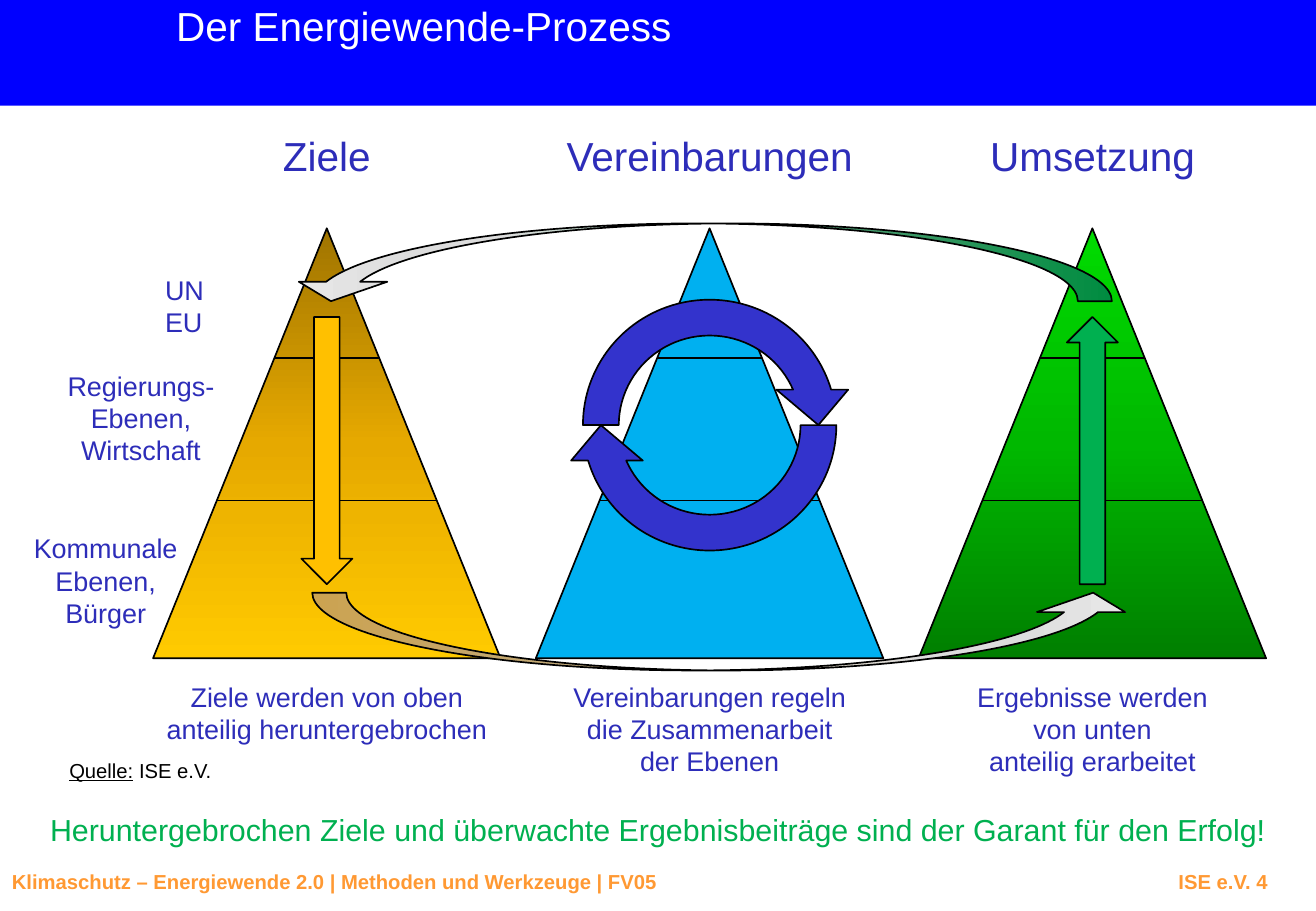
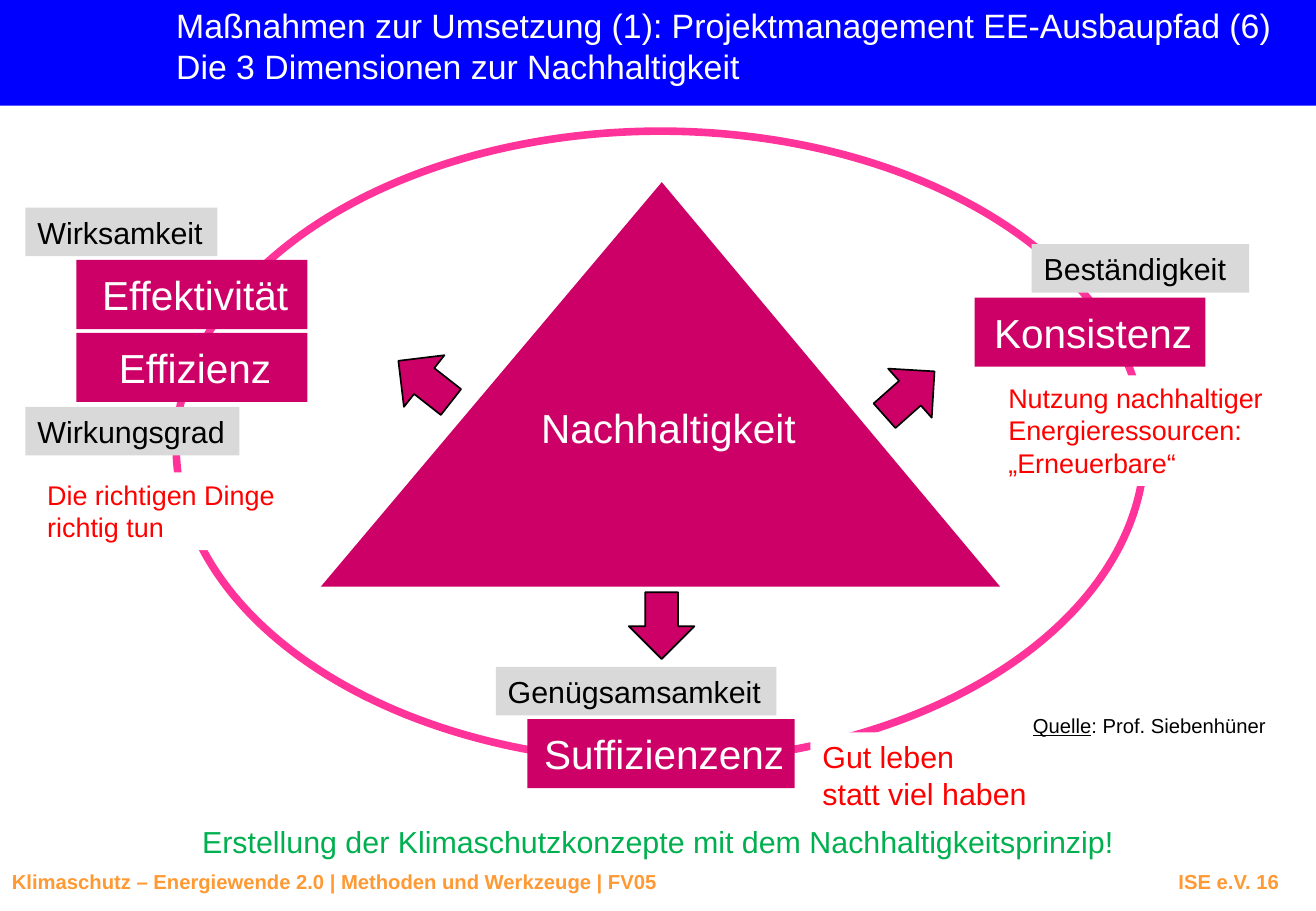
from dataclasses import dataclass

from lxml import etree
from pptx import Presentation
from pptx.dml.color import RGBColor
from pptx.enum.shapes import MSO_CONNECTOR, MSO_SHAPE
from pptx.enum.text import MSO_ANCHOR, MSO_AUTO_SIZE, PP_ALIGN
from pptx.oxml.ns import qn
from pptx.util import Inches, Pt


@dataclass(frozen=True)
class Theme:
    font: str = "Arial"
    band: str = "0000FF"
    footer: str = "FF9933"
    white: str = "FFFFFF"
    black: str = "000000"
    label: str = "2D2DB9"
    green: str = "00B050"
    red: str = "FF0000"
    gold: str = "FFC000"
    cyan: str = "00B0F0"
    cycle: str = "3333CC"
    magenta: str = "CC0066"
    pink: str = "FF3399"
    grey: str = "D9D9D9"
    heading_size: int = 24
    title_size: int = 20
    body_size: int = 18
    label_size: int = 16
    small_size: int = 12


T = Theme()
WIDTH, HEIGHT = 10.83, 7.5
GOLD_FADE = [(0, "A07400"), (50, "E6A900"), (100, "FFCA00")]
GREEN_FADE = [(0, "007F00"), (50, "00B800"), (100, "00DB00")]
GREY_FADE = [(74, "DCDCDC"), (83, "DCDCDC"), (100, "E8E8E8")]
PYRAMID_TOP, PYRAMID_W, PYRAMID_H = 1.88, 2.86, 3.54
COLUMN_X, COLUMN_STEP = 2.69, 3.15


def rgb(color):
    return RGBColor.from_string(color)


def format_runs(p, size, color, bold=False):
    for r in p.runs:
        r.font.name = T.font
        r.font.size = Pt(size)
        r.font.bold = bold
        r.font.color.rgb = rgb(color)


def write(sp, text, size, color, align=PP_ALIGN.LEFT, wrap=False):
    tf = sp.text_frame
    tf.text = text
    tf.word_wrap = wrap
    for p in tf.paragraphs:
        p.alignment = align
        format_runs(p, size, color)
    return tf


def set_insets(tf, inset):
    tf.margin_left = tf.margin_right = Inches(inset)
    tf.margin_top = tf.margin_bottom = Inches(inset)


def add_text(s, box, text, size, color, align=PP_ALIGN.LEFT, wrap=False,
             inset=None):
    sp = s.shapes.add_textbox(*map(Inches, box))
    tf = write(sp, text, size, color, align, wrap)
    tf.auto_size = MSO_AUTO_SIZE.SHAPE_TO_FIT_TEXT
    if inset is not None:
        set_insets(tf, inset)
    return tf


def set_gradient(sp, stops, angle):
    """Fill with (percent, colour) stops; angle runs clockwise in degrees."""
    sp.fill.gradient()
    grad = sp.fill._xPr.find(qn("a:gradFill"))
    stop_list = grad.find(qn("a:gsLst"))
    for old in list(stop_list):
        stop_list.remove(old)
    for percent, color in stops:
        stop = etree.SubElement(stop_list, qn("a:gs"), pos=str(percent * 1000))
        etree.SubElement(stop, qn("a:srgbClr"), val=color)
    grad.find(qn("a:lin")).set("ang", str(angle * 60000))


def add_shape(s, kind, box, fill=None, line=None, weight=1, rotation=0,
              angle=0):
    """Fill is a colour, a list of gradient stops or None."""
    sp = s.shapes.add_shape(kind, *map(Inches, box))
    sp.shadow.inherit = False
    sp.rotation = rotation
    if fill is None:
        sp.fill.background()
    elif isinstance(fill, list):
        set_gradient(sp, fill, angle)
    else:
        sp.fill.solid()
        sp.fill.fore_color.rgb = rgb(fill)
    if line is None:
        sp.line.fill.background()
    else:
        sp.line.color.rgb = rgb(line)
        sp.line.width = Pt(weight)
    return sp


def add_level_line(s, center, half_width, y):
    line = s.shapes.add_connector(
        MSO_CONNECTOR.STRAIGHT, Inches(center - half_width), Inches(y),
        Inches(center + half_width), Inches(y))
    line.line.color.rgb = rgb(T.black)
    line.line.width = Pt(1)
    etree.SubElement(line._element.spPr, qn("a:effectLst"))


def add_frame(s, title, title_box, title_size, page):
    """Draw the title band, the title and the footer."""
    add_shape(s, MSO_SHAPE.RECTANGLE, (0, 0, WIDTH, 0.87), T.band)
    add_text(s, title_box, title, title_size, T.white, inset=0)
    tf = add_text(s, (0, 7.11, WIDTH, 0.3), "", T.small_size, T.footer,
                  wrap=True)
    p = tf.paragraphs[0]
    p.text = ("Klimaschutz – Energiewende 2.0 | Methoden und Werkzeuge | FV05"
              f"\tISE e.V. {page}")
    tabs = etree.SubElement(p._p.get_or_add_pPr(), qn("a:tabLst"))
    etree.SubElement(tabs, qn("a:tab"), pos=str(Inches(9.6)), algn="l")
    format_runs(p, T.small_size, T.footer, bold=True)


def add_source(s, box, label, rest):
    """Write a source note with an underlined label."""
    p = add_text(s, box, label, T.small_size, T.black, inset=0).paragraphs[0]
    p.add_run().text = rest
    format_runs(p, T.small_size, T.black)
    p.runs[0].font.underline = True


def add_message(s, top, text):
    add_text(s, (0, top, WIDTH, 0.44), text, T.body_size, T.green,
             PP_ALIGN.CENTER, wrap=True, inset=0.07)


def add_pyramid_column(s, center, heading, caption, fill, angle):
    add_text(s, (center - 1.29, 1.03, 2.58, 0.51), heading, T.heading_size,
             T.label, PP_ALIGN.CENTER)
    add_shape(s, MSO_SHAPE.ISOSCELES_TRIANGLE,
              (center - PYRAMID_W / 2, PYRAMID_TOP, PYRAMID_W, PYRAMID_H),
              fill, T.black, angle=angle)
    for y in (2.95, 4.12):
        half_width = (y - PYRAMID_TOP) / PYRAMID_H * PYRAMID_W / 2
        add_level_line(s, center, half_width, y)
    add_text(s, (center - 1.475, 5.55, 2.95, 0.64), caption, T.label_size,
             T.label, PP_ALIGN.CENTER)


def add_feedback_arrow(s, left, top, start_color, flipped=False):
    sp = add_shape(s, MSO_SHAPE.CURVED_UP_ARROW, (left, top, 6.79, 0.64),
                   [(0, start_color)] + GREY_FADE, T.black)
    for i, value in enumerate((0.437, 1.137, 0.25)):
        sp.adjustments[i] = value
    if flipped:
        xfrm = sp._element.spPr.find(qn("a:xfrm"))
        xfrm.set("flipH", "1")
        xfrm.set("flipV", "1")


def add_principle(s, box, text):
    sp = add_shape(s, MSO_SHAPE.RECTANGLE, box, T.magenta)
    tf = write(sp, text, T.heading_size, T.white, PP_ALIGN.CENTER)
    tf.margin_left = Inches(0.15)


def add_tag(s, box, text):
    sp = add_shape(s, MSO_SHAPE.RECTANGLE, box, T.grey)
    write(sp, text, T.body_size, T.black)


def add_explanation(s, box, text, size):
    sp = add_shape(s, MSO_SHAPE.RECTANGLE, box, T.white)
    tf = write(sp, text, size, T.red, wrap=True)
    tf.vertical_anchor = MSO_ANCHOR.TOP


def build_process(s):
    add_frame(s, "Der Energiewende-Prozess", (1.45, 0.01, 4.12, 0.4),
              T.heading_size, 4)
    columns = [
        ("Ziele", "Ziele werden von oben\nanteilig heruntergebrochen",
         GOLD_FADE, 90),
        ("Vereinbarungen",
         "Vereinbarungen regeln\vdie Zusammenarbeit\vder Ebenen", T.cyan, 0),
        ("Umsetzung", "Ergebnisse werden\nvon unten\vanteilig erarbeitet",
         GREEN_FADE, 270),
    ]
    centers = [COLUMN_X + i * COLUMN_STEP for i in range(len(columns))]
    for center, column in zip(centers, columns):
        add_pyramid_column(s, center, *column)

    levels = [
        ((1.26, 2.2, 0.52, 0.64), "UN\vEU", PP_ALIGN.LEFT),
        ((0.45, 2.99, 1.42, 0.91), "Regierungs-\nEbenen,\vWirtschaft",
         PP_ALIGN.CENTER),
        ((0.17, 4.33, 1.4, 0.91), "Kommunale\nEbenen,\vBürger",
         PP_ALIGN.CENTER),
    ]
    for box, text, align in levels:
        add_text(s, box, text, T.label_size, T.label, align)

    for kind, center, color in ((MSO_SHAPE.DOWN_ARROW, centers[0], T.gold),
                                (MSO_SHAPE.UP_ARROW, centers[2], T.green)):
        add_shape(s, kind, (center - 0.21, 2.61, 0.42, 2.2), color, T.black)
    for rotation in (180, 0):
        add_shape(s, MSO_SHAPE.CIRCULAR_ARROW,
                  (centers[1] - 1.19, 2.32, 2.38, 2.36), T.cycle, T.black,
                  rotation=rotation)
    add_feedback_arrow(s, 2.57, 4.88, "FFCC66")
    add_feedback_arrow(s, 2.36, 1.84, T.green, flipped=True)
    add_message(s, 6.61, "Heruntergebrochen Ziele und überwachte "
                "Ergebnisbeiträge sind der Garant für den Erfolg!")
    add_source(s, (0.57, 6.24, 1.18, 0.2), "Quelle:", " ISE e.V.")


def build_sustainability(s):
    add_frame(s, "Maßnahmen zur Umsetzung (1): Projektmanagement "
              "EE-Ausbaupfad (6)\nDie 3 Dimensionen zur Nachhaltigkeit",
              (1.45, 0.04, 9.16, 0.67), T.title_size, 16)
    add_shape(s, MSO_SHAPE.OVAL, (1.45, 1.08, 7.97, 5.19), line=T.pink,
              weight=4.5)
    triangle = add_shape(s, MSO_SHAPE.ISOSCELES_TRIANGLE,
                         (2.64, 1.5, 5.59, 3.33), T.magenta)
    triangle.adjustments[0] = 0.502
    add_text(s, (4.34, 3.27, 2.32, 0.5), "Nachhaltigkeit", T.heading_size,
             T.white, PP_ALIGN.CENTER)

    for left, top, rotation in ((7.21, 2.97, 318.4), (3.22, 2.87, 218.1),
                                (5.17, 4.88, 90)):
        add_shape(s, MSO_SHAPE.RIGHT_ARROW, (left, top, 0.55, 0.54),
                  T.magenta, T.black, rotation=rotation)
    for left, top, width, text in ((4.34, 5.92, 2.2, "Suffizienzenz"),
                                   (0.63, 2.14, 1.9, "Effektivität"),
                                   (0.63, 2.74, 1.9, "Effizienz"),
                                   (8.02, 2.45, 1.9, "Konsistenz")):
        add_principle(s, (left, top, width, 0.57), text)
    for left, top, width, text in ((4.08, 5.49, 2.31, "Genügsamsamkeit"),
                                   (8.49, 2.01, 1.79, "Beständigkeit"),
                                   (0.21, 3.35, 1.76, "Wirkungsgrad"),
                                   (0.21, 1.71, 1.58, "Wirksamkeit")):
        add_tag(s, (left, top, width, 0.4), text)

    add_explanation(s, (8.2, 3.09, 2.63, 0.91),
                    "Nutzung nachhaltiger\nEnergieressourcen:\v„Erneuerbare“",
                    T.label_size)
    add_explanation(s, (6.67, 6.03, 1.9, 0.71),
                    "Gut leben\vstatt viel haben", T.body_size)
    add_explanation(s, (0.29, 3.89, 2.23, 0.64),
                    "Die richtigen Dinge richtig tun", T.label_size)
    add_source(s, (8.5, 5.87, 1.93, 0.2), "Quelle", ": Prof. Siebenhüner")
    add_message(s, 6.71, "Erstellung der Klimaschutzkonzepte mit dem "
                "Nachhaltigkeitsprinzip!")


def main():
    prs = Presentation()
    prs.slide_width, prs.slide_height = Inches(WIDTH), Inches(HEIGHT)
    for build in (build_process, build_sustainability):
        build(prs.slides.add_slide(prs.slide_layouts[6]))
    prs.save("out.pptx")


if __name__ == "__main__":
    main()
